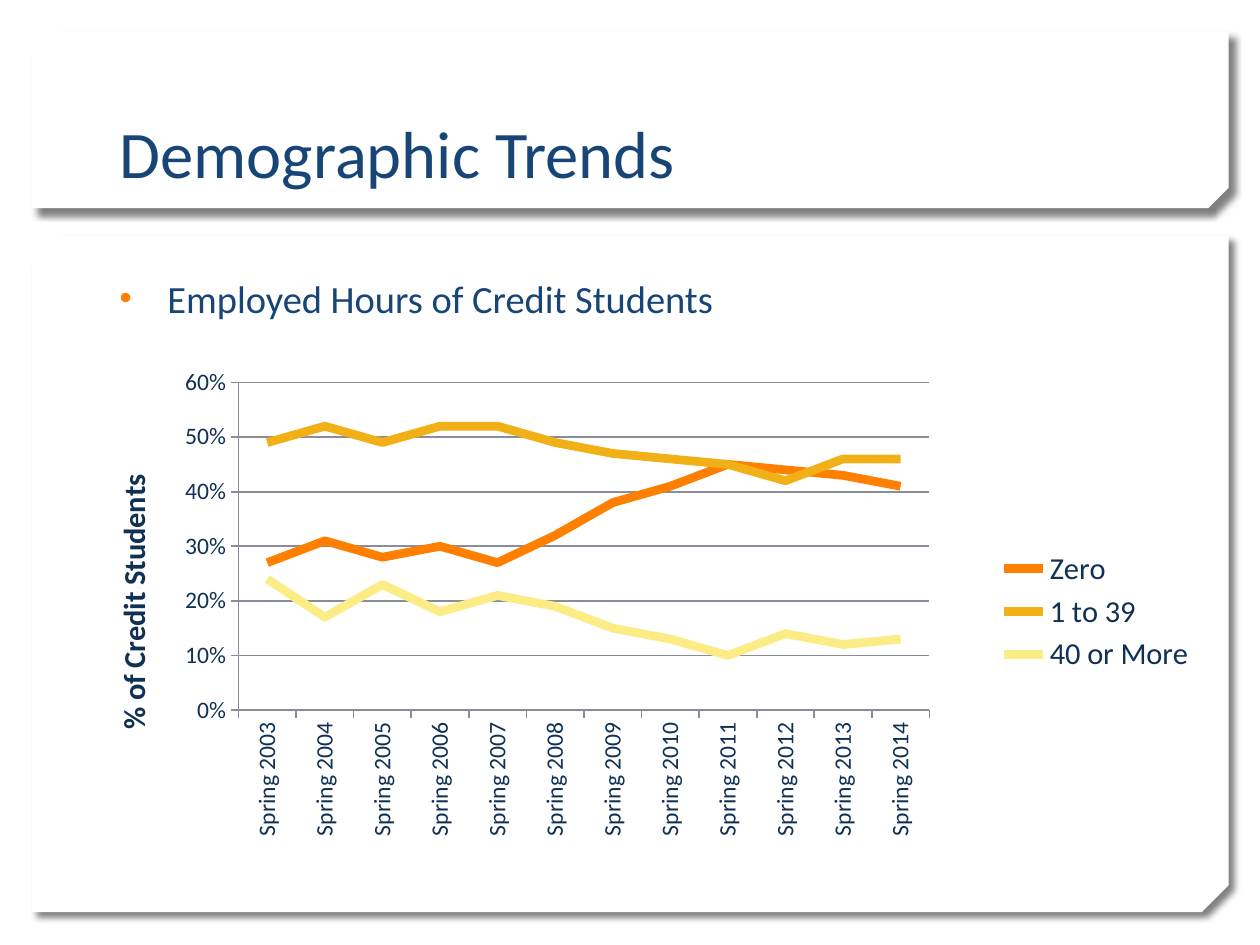
"""Build the Demographic Trends slide with its line chart of employed hours."""
from lxml.etree import SubElement
from pptx import Presentation
from pptx.chart.data import CategoryChartData
from pptx.dml.color import RGBColor
from pptx.enum.chart import XL_CHART_TYPE, XL_LEGEND_POSITION, XL_TICK_MARK
from pptx.enum.shapes import MSO_SHAPE
from pptx.enum.text import MSO_ANCHOR, MSO_AUTO_SIZE, PP_ALIGN
from pptx.oxml import parse_xml
from pptx.oxml.ns import nsdecls, qn
from pptx.util import Cm, Pt

NAVY, INK, ORANGE, GREY = "174576", "103154", "FF7F01", "8A8C99"


def color(code):
    return RGBColor.from_string(code)


def style(font, size, code, bold=False):
    look = {"name": "Calibri", "size": Pt(size), "bold": bold}
    for key, value in look.items():
        setattr(font, key, value)
    font.color.rgb = color(code)


deck = Presentation()
deck.slide_width, deck.slide_height = Cm(25.4), Cm(19.05)
slide = deck.slides.add_slide(deck.slide_layouts[1])
tree = slide.shapes.element

panels = [(4.75, 13.64, 0.04), (0.64, 3.56, 0.117)]
for spot, (top, height, snip) in enumerate(panels, 2):
    panel = slide.shapes.add_shape(
        MSO_SHAPE.SNIP_2_DIAG_RECTANGLE, Cm(0.64), Cm(top), Cm(24.13), Cm(height))
    panel.adjustments[0], panel.adjustments[1] = 0, snip
    panel.fill.solid()
    panel.fill.fore_color.rgb = color("FFFFFF")
    panel.line.fill.background()
    props = panel.element.spPr
    props.find(qn("a:xfrm")).set("flipV", "1")
    props.append(parse_xml(
        f'<a:effectLst {nsdecls("a")}><a:outerShdw blurRad="{Pt(4)}" dist="{Pt(5)}" '
        'dir="2700000" algn="tl" rotWithShape="0"><a:srgbClr val="000000">'
        '<a:alpha val="50000"/></a:srgbClr></a:outerShdw></a:effectLst>'))
    tree.insert(spot, panel.element)

title, body = slide.placeholders
texts = [
    (title, "Demographic Trends", 38, 0.81, 3.18, MSO_ANCHOR.BOTTOM),
    (body, "Employed Hours of Credit Students", 22, 5.41, 11.13, MSO_ANCHOR.TOP),
]
for holder, words, size, top, height, anchor in texts:
    place = {"left": Cm(2.16), "top": Cm(top), "width": Cm(21.06), "height": Cm(height)}
    for key, value in place.items():
        setattr(holder, key, value)
    frame = holder.text_frame
    frame.text = words
    frame.auto_size = MSO_AUTO_SIZE.NONE
    frame.vertical_anchor = anchor
    para = frame.paragraphs[0]
    para.alignment = PP_ALIGN.LEFT
    style(para.runs[0].font, size, NAVY)

item = body.text_frame.paragraphs[0]
item.space_before = Pt(20)
marks = item._p.get_or_add_pPr()
marks.set("marL", str(Cm(0.96)))
marks.set("indent", str(Cm(-0.96)))
SubElement(SubElement(marks, qn("a:buClr")), qn("a:srgbClr"), val=ORANGE)
SubElement(marks, qn("a:buSzPct"), val="90000")
SubElement(marks, qn("a:buFont"), typeface="Arial")
SubElement(marks, qn("a:buChar"), char="•")

lines = [
    ("Zero", ORANGE, [27, 31, 28, 30, 27, 32, 38, 41, 45, 44, 43, 41]),
    ("1 to 39", "F1B015", [49, 52, 49, 52, 52, 49, 47, 46, 45, 42, 46, 46]),
    ("40 or More", "FBEC85", [24, 17, 23, 18, 21, 19, 15, 13, 10, 14, 12, 13]),
]
data = CategoryChartData(number_format="0%")
data.categories = [f"Spring {year}" for year in range(2003, 2015)]
for name, code, shares in lines:
    data.add_series(name, [share / 100 for share in shares])
chart = slide.shapes.add_chart(
    XL_CHART_TYPE.LINE, Cm(1.22), Cm(7.21), Cm(23.14), Cm(10.24), data).chart
style(chart.font, 17.4, INK)
chart.has_title = False
chart.has_legend = True
chart.legend.position = XL_LEGEND_POSITION.RIGHT
chart.legend.include_in_layout = False
style(chart.legend.font, 17.4, INK)

plot = chart.plots[0]
plot.vary_by_categories = False
for series, (name, code, shares) in zip(plot.series, lines):
    series.smooth = False
    series.format.line.width = Pt(5)
    series.format.line.color.rgb = color(code)

years, share = chart.category_axis, chart.value_axis
for axis in (years, share):
    axis.major_tick_mark = XL_TICK_MARK.OUTSIDE
    axis.minor_tick_mark = XL_TICK_MARK.NONE
    style(axis.tick_labels.font, 13.5, INK)
for part in (years, share, share.major_gridlines):
    part.format.line.color.rgb = color(GREY)
    part.format.line.width = Pt(1)
years._element.find(qn("c:txPr")).find(qn("a:bodyPr")).set("rot", "-5400000")

scale = {"minimum_scale": 0, "maximum_scale": 0.6, "major_unit": 0.1}
for key, value in scale.items():
    setattr(share, key, value)
share.tick_labels.number_format = "0%"
share.tick_labels.number_format_is_linked = False
label = share.axis_title.text_frame
label.text = "% of Credit Students"
style(label.paragraphs[0].runs[0].font, 17.4, INK, True)

area = plot._element.getparent()
old = area.find(qn("c:layout"))
if old is not None:
    area.remove(old)
layout = parse_xml(f'<c:layout {nsdecls("c")}><c:manualLayout/></c:layout>')
box = {"layoutTarget": "inner", "xMode": "edge", "yMode": "edge",
       "x": 0.155, "y": 0.049, "w": 0.602, "h": 0.645}
for key, value in box.items():
    SubElement(layout[0], qn(f"c:{key}"), val=str(value))
area.insert(0, layout)

deck.save("out.pptx")
